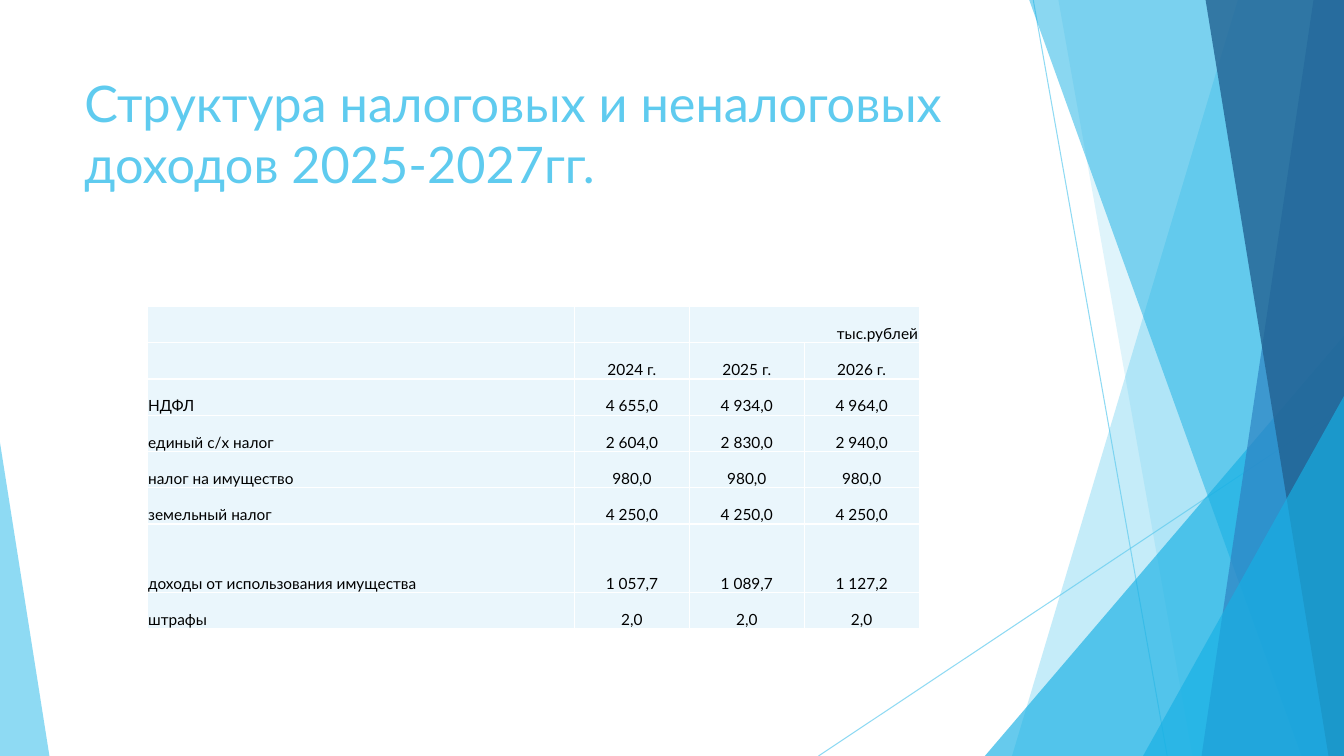
from lxml.etree import SubElement
from pptx import Presentation
from pptx.dml.color import RGBColor
from pptx.enum.shapes import MSO_CONNECTOR, MSO_SHAPE
from pptx.enum.text import MSO_ANCHOR, PP_ALIGN as AL
from pptx.oxml.ns import qn
from pptx.util import Inches, Pt

prs = Presentation()
prs.slide_width, prs.slide_height = Inches(13.33), Inches(7.5)
W, H = prs.slide_width, prs.slide_height
COL, ROW = W / 100, H / 100
s = prs.slides.add_slide(prs.slide_layouts[6])
SKY, CYAN, BLUE, NAVY = "5FCBEF", "17B0E4", "2E83C3", "226292"
PALE, WHITE, BLACK = "EAF6FC", "FFFFFF", "000000"


def paint(fill, color, alpha=100):
    fill.solid()
    fill.fore_color.rgb = RGBColor.from_string(color)
    if alpha < 100:
        for clr in fill._xPr.iter(qn("a:srgbClr")):
            SubElement(clr, qn("a:alpha"), val=str(alpha * 1000))


def write(tf, text, size=11, color=BLACK, align=AL.LEFT, font="Lato"):
    tf.word_wrap = True
    p = tf.paragraphs[0]
    p.alignment = align
    r = p.add_run()
    r.text = text
    r.font.name, r.font.size = font, Pt(size)
    paint(r.font.fill, color)


for x1, y1, x2 in [(76.88, 0, 86.85), (100, 53.73, 60.9)]:
    cn = s.shapes.add_connector(MSO_CONNECTOR.STRAIGHT, int(x1 * COL), int(y1 * ROW), int(x2 * COL), H)
    cn.line.width = Pt(0.75)
    paint(cn.line.fill, SKY, 70)
    SubElement(cn._element.spPr, qn("a:effectLst"))

facets = [
    ("band", 92.1, 75.3, SKY, 36),
    ("band", 78.75, 88.73, SKY, 20),
    ("triangle", 73.28, 44.4, CYAN, 66),
    ("band", 76.58, 96.83, CYAN, 50),
    ("band", 97.73, 89.4, BLUE, 70),
    ("band", 89.7, 98.85, NAVY, 80),
    ("triangle", 85.05, 52.4, CYAN, 66),
    ("corner", 0, 58.53, SKY, 70),
]
for kind, a, b, color, alpha in facets:
    if kind == "band":
        fb = s.shapes.build_freeform(int(a * COL), 0)
        fb.add_line_segments([(W, 0), (W, H), (int(b * COL), H)])
        sp = fb.convert_to_shape()
    else:
        right = 3.68 if kind == "corner" else 100
        sp = s.shapes.add_shape(MSO_SHAPE.ISOSCELES_TRIANGLE, int(a * COL), int(b * ROW),
                                int((right - a) * COL), int((100 - b) * ROW))
        sp.adjustments[0] = 0 if kind == "corner" else 1
    sp.shadow.inherit = False
    sp.line.fill.background()
    paint(sp.fill, color, alpha)

title = s.shapes.add_textbox(int(5.55 * COL), int(8.93 * ROW), int(70.5 * COL), int(19.2 * ROW))
write(title.text_frame, "Структура налоговых и неналоговых доходов 2025-2027гг.", size=36, color=SKY)

rows = [
    ("", "", "тыс.рублей", ""),
    ("", "2024 г.", "2025 г.", "2026 г."),
    ("НДФЛ", "4 655,0", "4 934,0", "4 964,0"),
    ("единый с/х налог", "2 604,0", "2 830,0", "2 940,0"),
    ("налог на имущество", "980,0", "980,0", "980,0"),
    ("земельный налог", "4 250,0", "4 250,0", "4 250,0"),
    ("доходы от использования имущества", "1 057,7", "1 089,7", "1 127,2"),
    ("штрафы", "2,0", "2,0", "2,0"),
]
widths = [31.8] + [8.55] * 3
heights = [4.8] * 6 + [9.07, 4.8]
table = s.shapes.add_table(len(rows), len(widths), int(10.95 * COL), int(40.53 * ROW),
                           int(sum(widths) * COL), int(sum(heights) * ROW)).table
table.first_row = table.horz_banding = False
for column, width in zip(table.columns, widths):
    column.width = int(width * COL)
for row, height in zip(table.rows, heights):
    row.height = int(height * ROW)
table.cell(0, 2).merge(table.cell(0, 3))

for i, values in enumerate(rows):
    for j, value in enumerate(values):
        cell = table.cell(i, j)
        cell.vertical_anchor = MSO_ANCHOR.BOTTOM
        cell.margin_left = cell.margin_right = cell.margin_top = Inches(0.01)
        cell.margin_bottom = 0
        for side in ("a:lnL", "a:lnR", "a:lnT", "a:lnB"):
            ln = SubElement(cell._tc.get_or_add_tcPr(), qn(side), w=str(Pt(1)))
            SubElement(SubElement(ln, qn("a:solidFill")), qn("a:srgbClr"), val=WHITE)
        paint(cell.fill, PALE)
        if value:
            write(cell.text_frame, value, align=AL.RIGHT if i == 0 else AL.CENTER if j else AL.LEFT)

prs.save("out.pptx")
